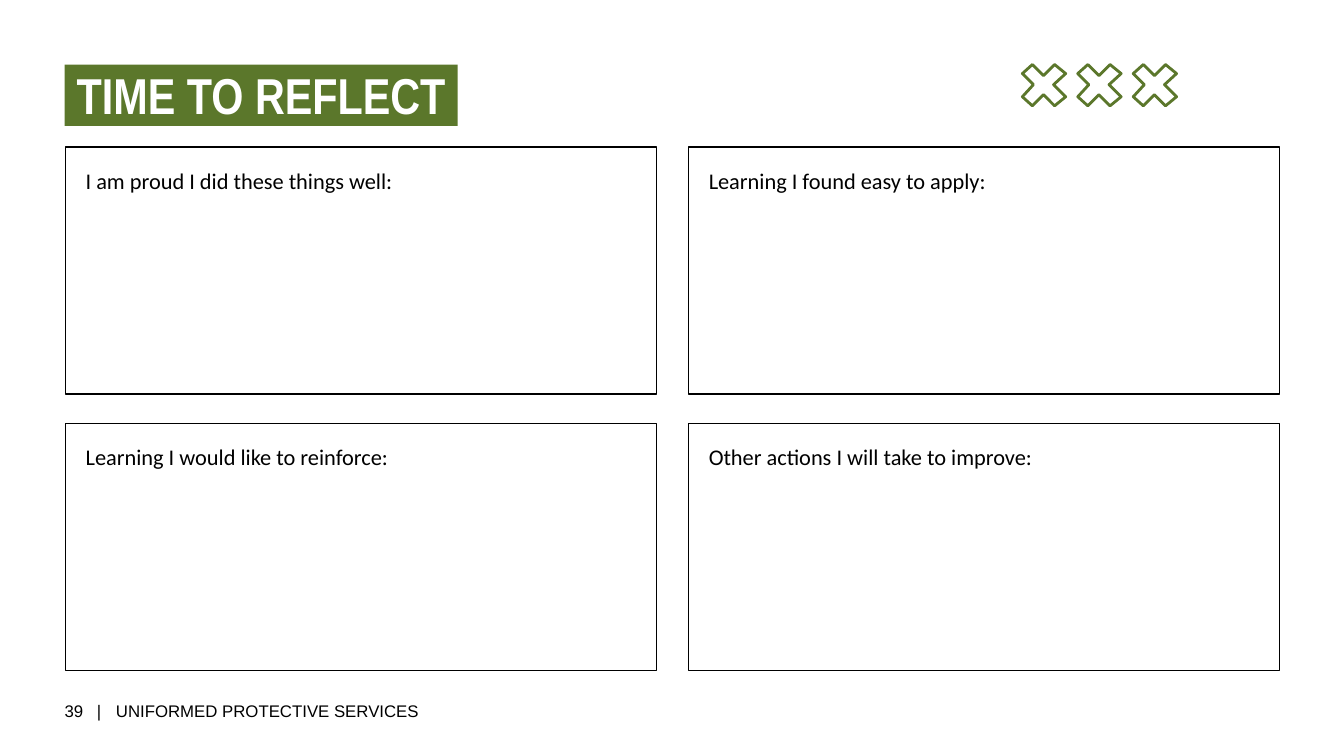
import pptx
import pptx.util
import pptx.dml.color
import pptx.enum.shapes
import pptx.enum.text
import pptx.oxml
import pptx.oxml.ns

Inches = pptx.util.Inches
Pt = pptx.util.Pt

COLORS = {"green": "5B772B", "black": "000000", "white": "FFFFFF"}

# Boxes: left, top, width, height in inches
TITLE_BOX = (0.64, 0.64, 3.9, 0.61)
CROSSES_BOX = (10.14, 0.64, 1.53, 0.41)
PROMPTS_BOX = (0.65, 1.46, 12.04, 5.19)
FOOTER_BOX = (0.64, 6.95, 3.82, 0.2)

PROMPTS = [
    ["I am proud I did these things well:", "Learning I found easy to apply:"],
    ["Learning I would like to reinforce:", "Other actions I will take to improve:"],
]
CROSS_OUTLINE = [
    (0.43, 0.32), (0.31, 0.2), (0.43, 0.09), (0.32, 0), (0.21, 0.11), (0.1, 0),
    (0, 0.09), (0.11, 0.2), (0, 0.32), (0.1, 0.41), (0.21, 0.3), (0.32, 0.41),
]


def color(name):
    return pptx.dml.color.RGBColor.from_string(COLORS[name])


def place(shape, box):
    shape.left, shape.top, shape.width, shape.height = map(Inches, box)


def set_frame(frame, insets, anchor, wrap=True):
    frame.auto_size = pptx.enum.text.MSO_AUTO_SIZE.NONE
    frame.word_wrap = wrap
    frame.vertical_anchor = anchor
    (frame.margin_left, frame.margin_top,
     frame.margin_right, frame.margin_bottom) = map(Inches, insets)


def add_run(paragraph, text, font_name, size, color_name, bold=False):
    paragraph.alignment = pptx.enum.text.PP_ALIGN.LEFT
    run = paragraph.add_run()
    run.text = text
    run.font.name = font_name
    run.font.size = Pt(size)
    run.font.bold = bold
    run.font.color.rgb = color(color_name)


def add_title(slide, box):
    title = slide.shapes.title
    place(title, box)
    title.fill.solid()
    title.fill.fore_color.rgb = color("green")
    set_frame(title.text_frame, (0.12, 0, 0.08, 0),
              pptx.enum.text.MSO_ANCHOR.TOP, wrap=False)
    add_run(title.text_frame.paragraphs[0], "TIME TO REFLECT",
            "Arial Narrow", 36, "white", bold=True)


def add_crosses(slide, box, count=3):
    left, top, width, height = box
    cross_width = max(x for x, y in CROSS_OUTLINE)
    pitch = (width - cross_width) / (count - 1)
    builder = None
    for index in range(count):
        points = [(Inches(left + index * pitch + x), Inches(top + y))
                  for x, y in CROSS_OUTLINE]
        if builder is None:
            builder = slide.shapes.build_freeform(*points[0])
        else:
            builder.move_to(*points[0])
        builder.add_line_segments(points[1:], close=True)
    crosses = builder.convert_to_shape()
    crosses.shadow.inherit = False
    crosses.fill.background()
    crosses.line.color.rgb = color("green")
    crosses.line.width = Pt(2)


def add_prompt(slide, box, text):
    shape = slide.shapes.add_shape(
        pptx.enum.shapes.MSO_SHAPE.RECTANGLE, *map(Inches, box))
    shape.shadow.inherit = False
    shape.fill.background()
    shape.line.color.rgb = color("black")
    shape.line.width = Pt(1)
    set_frame(shape.text_frame, (0.2,) * 4, pptx.enum.text.MSO_ANCHOR.TOP)
    paragraph = shape.text_frame.paragraphs[0]
    paragraph.space_after = Pt(10)
    add_run(paragraph, text, "Calibri", 16, "black")


def add_prompt_grid(slide, box, column_gap=0.32, row_gap=0.29):
    left, top, width, height = box
    cell_width = (width - column_gap) / 2
    cell_height = (height - row_gap) / 2
    for row, texts in enumerate(PROMPTS):
        for column, text in enumerate(texts):
            cell = (left + column * (cell_width + column_gap),
                    top + row * (cell_height + row_gap),
                    cell_width, cell_height)
            add_prompt(slide, cell, text)


def add_footer(slide, box):
    footer = slide.shapes.add_textbox(*map(Inches, box))
    set_frame(footer.text_frame, (0,) * 4, pptx.enum.text.MSO_ANCHOR.MIDDLE)
    paragraph = footer.text_frame.paragraphs[0]
    # Tab stops for the divider and the programme name
    properties = paragraph._p.get_or_add_pPr()
    tabs = pptx.oxml.parse_xml(
        "<a:tabLst %s/>" % pptx.oxml.ns.nsdecls("a"))
    for position in (0.32, 0.51):
        tab = tabs.makeelement(pptx.oxml.ns.qn("a:tab"),
                               {"pos": str(Inches(position)), "algn": "l"})
        tabs.append(tab)
    properties.append(tabs)
    add_run(paragraph, "39\t|\tUNIFORMED PROTECTIVE SERVICES",
            "Arial", 12, "black")


def main():
    presentation = pptx.Presentation()
    presentation.slide_width = Inches(13.33)
    presentation.slide_height = Inches(7.5)
    slide = presentation.slides.add_slide(presentation.slide_layouts[5])
    add_title(slide, TITLE_BOX)
    add_crosses(slide, CROSSES_BOX)
    add_prompt_grid(slide, PROMPTS_BOX)
    add_footer(slide, FOOTER_BOX)
    presentation.save("out.pptx")


if __name__ == "__main__":
    main()
